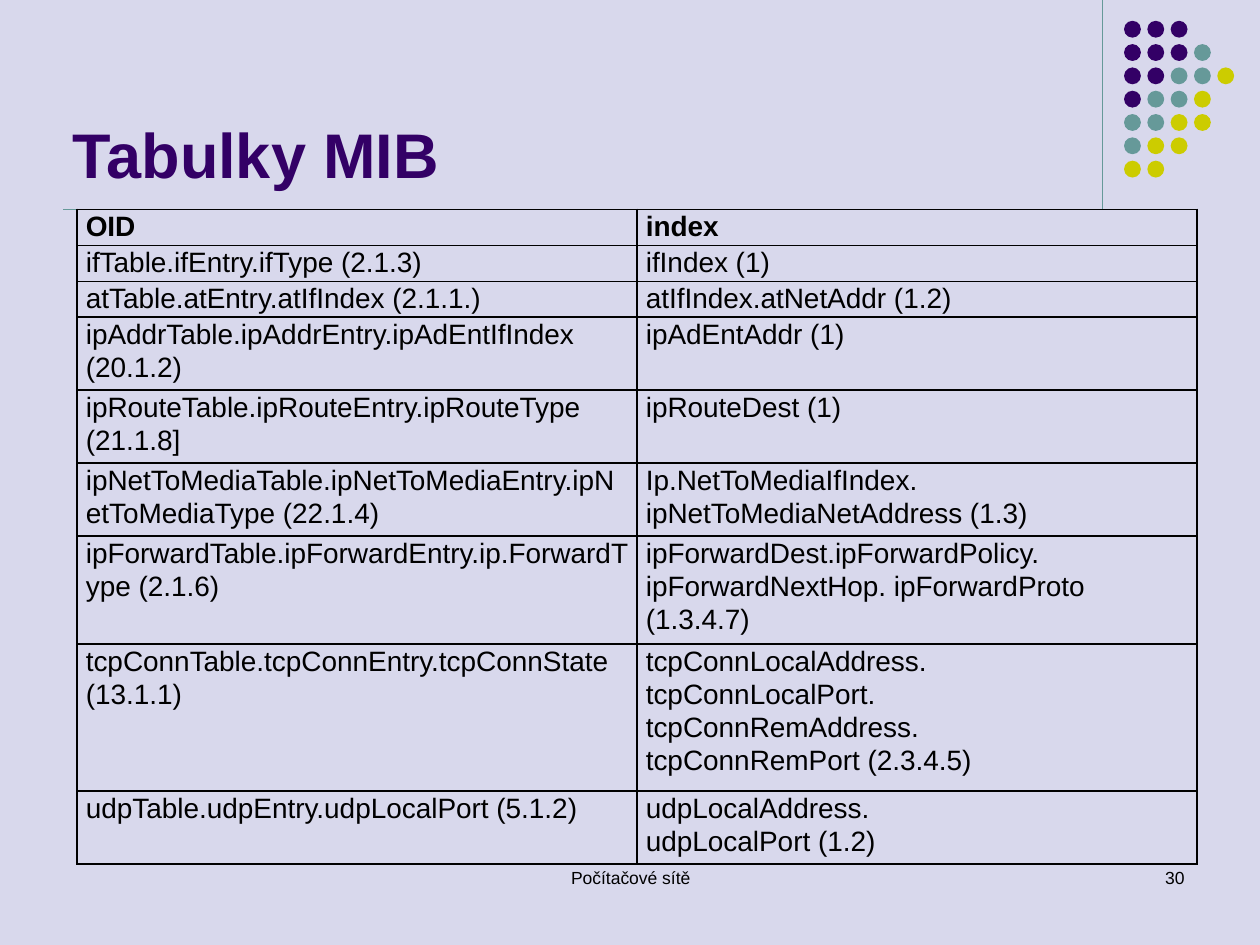
from copy import deepcopy
from dataclasses import dataclass

from lxml import etree
from pptx import Presentation
from pptx import util as u
from pptx.dml.color import RGBColor
from pptx.enum import shapes, text
from pptx.oxml import ns

HUES = {"back": "D8D8EC", "plum": "330066", "teal": "669999", "lime": "CCCC00", "ink": "000000"}
DOTS = ("PPP", "PPPT", "PPTTL", "PTTL", "TTLL", "TLL", "LL")
KEYS = {"P": "plum", "T": "teal", "L": "lime"}
LEFT, TOP, STEP, SIZE = 22.66, 0.42, 0.47, 0.34
EDGE, RULE = 22.23, 4.23


@dataclass
class Row:
    oid: str
    index: str
    high: float = 1.47
    bold: bool = False


@dataclass
class Label:
    words: str
    box: tuple[float, float, float, float]
    size: int = 10
    hue: str = "ink"
    bold: bool = False
    align: str = "LEFT"
    anchor: str = "TOP"
    inset: tuple[float, float] = (0.25, 0.13)


ROWS = (
    Row("OID", "index", 0.71, True),
    Row("ifTable.ifEntry.ifType (2.1.3)", "ifIndex (1)", 0.71),
    Row("atTable.atEntry.atIfIndex (2.1.1.)", "atIfIndex.atNetAddr (1.2)", 0.71),
    Row("ipAddrTable.ipAddrEntry.ipAdEntIfIndex (20.1.2)", "ipAdEntAddr (1)"),
    Row("ipRouteTable.ipRouteEntry.ipRouteType (21.1.8]", "ipRouteDest (1)"),
    Row("ipNetToMediaTable.ipNetToMediaEntry.ipNetToMediaType (22.1.4)",
        "Ip.NetToMediaIfIndex.\nipNetToMediaNetAddress (1.3)"),
    Row("ipForwardTable.ipForwardEntry.ip.ForwardType (2.1.6)",
        "ipForwardDest.ipForwardPolicy. ipForwardNextHop. ipForwardProto (1.3.4.7)"),
    Row("tcpConnTable.tcpConnEntry.tcpConnState (13.1.1)",
        "tcpConnLocalAddress.\ntcpConnLocalPort.\ntcpConnRemAddress.\n\ntcpConnRemPort (2.3.4.5)", 2.97),
    Row("udpTable.udpEntry.udpLocalPort (5.1.2)", "udpLocalAddress.\nudpLocalPort (1.2)"),
)
LABELS = (
    Label("Počítačové sítě", (8.69, 17.35, 8.05, 1.27), align="CENTER"),
    Label("30", (18.21, 17.35, 5.92, 1.27), align="RIGHT"),
    Label("Tabulky MIB", (1.27, 2.24, 19.02, 1.7), 36, "plum", True,
          anchor="BOTTOM", inset=(0.2, 0.08)),
)


def tint(name: str) -> RGBColor:
    return RGBColor.from_string(HUES[name])


def write(frame, words: str, *, size: int, hue: str = "ink", bold: bool = False,
          align: str = "LEFT", space: float = 1.0) -> None:
    for i, block in enumerate(words.split("\n\n")):
        para = frame.add_paragraph() if i else frame.paragraphs[0]
        para.text = block.replace("\n", "\v")
        para.alignment = text.PP_ALIGN[align]
        para.line_spacing = space
        for run in para.runs:
            font = run.font
            font.name, font.size, font.bold = "Arial", u.Pt(size), bold
            font.color.rgb = tint(hue)
        for gap in para._p.findall(ns.qn("a:br")):
            gap.append(deepcopy(para.runs[0]._r.rPr))


def line(slide, *ends: float) -> None:
    bar = slide.shapes.add_connector(shapes.MSO_CONNECTOR.STRAIGHT, *map(u.Cm, ends))
    bar.line.color.rgb = tint("teal")
    bar.line.width = u.Pt(0.75)
    etree.SubElement(bar._element.spPr, ns.qn("a:effectLst"))


def dots(slide) -> None:
    for y, keys in enumerate(DOTS):
        for x, key in enumerate(keys):
            dot = slide.shapes.add_shape(
                shapes.MSO_SHAPE.OVAL, u.Cm(LEFT + x * STEP), u.Cm(TOP + y * STEP),
                u.Cm(SIZE), u.Cm(SIZE))
            dot.shadow.inherit = False
            dot.fill.solid()
            dot.fill.fore_color.rgb = tint(KEYS[key])
            dot.line.fill.background()


def label(slide, item: Label) -> None:
    frame = slide.shapes.add_textbox(*map(u.Cm, item.box)).text_frame
    frame.word_wrap = True
    frame.vertical_anchor = text.MSO_ANCHOR[item.anchor]
    frame.margin_left = frame.margin_right = u.Cm(item.inset[0])
    frame.margin_top = frame.margin_bottom = u.Cm(item.inset[1])
    write(frame, item.words, size=item.size, hue=item.hue, bold=item.bold, align=item.align)


def frame_cell(cell) -> None:
    props = cell._tc.get_or_add_tcPr()
    for side in ("lnL", "lnR", "lnT", "lnB"):
        edge = etree.SubElement(props, ns.qn(f"a:{side}"), w=str(u.Pt(1)))
        fill = etree.SubElement(edge, ns.qn("a:solidFill"))
        etree.SubElement(fill, ns.qn("a:srgbClr"), val=HUES["ink"])
    cell.fill.background()


def grid(slide) -> None:
    high = sum(row.high for row in ROWS)
    table = slide.shapes.add_table(
        len(ROWS), 2, u.Cm(1.55), u.Cm(4.22), u.Cm(22.58), u.Cm(high)).table
    table.first_row = table.horz_banding = False
    for y, row in enumerate(ROWS):
        table.rows[y].height = u.Cm(row.high)
        for x, words in enumerate((row.oid, row.index)):
            cell = table.cell(y, x)
            cell.margin_left = cell.margin_right = u.Cm(0.18)
            cell.margin_top = cell.margin_bottom = 0
            write(cell.text_frame, words, size=16, bold=row.bold, space=1.07)
            frame_cell(cell)


def main() -> None:
    deck = Presentation()
    deck.slide_width, deck.slide_height = u.Cm(25.4), u.Cm(19.05)
    slide = deck.slides.add_slide(deck.slide_layouts[6])
    slide.background.fill.solid()
    slide.background.fill.fore_color.rgb = tint("back")
    line(slide, EDGE, 0, EDGE, RULE)
    dots(slide)
    line(slide, 1.27, RULE, EDGE, RULE)
    for item in LABELS:
        label(slide, item)
    grid(slide)
    deck.save("out.pptx")


if __name__ == "__main__":
    main()
